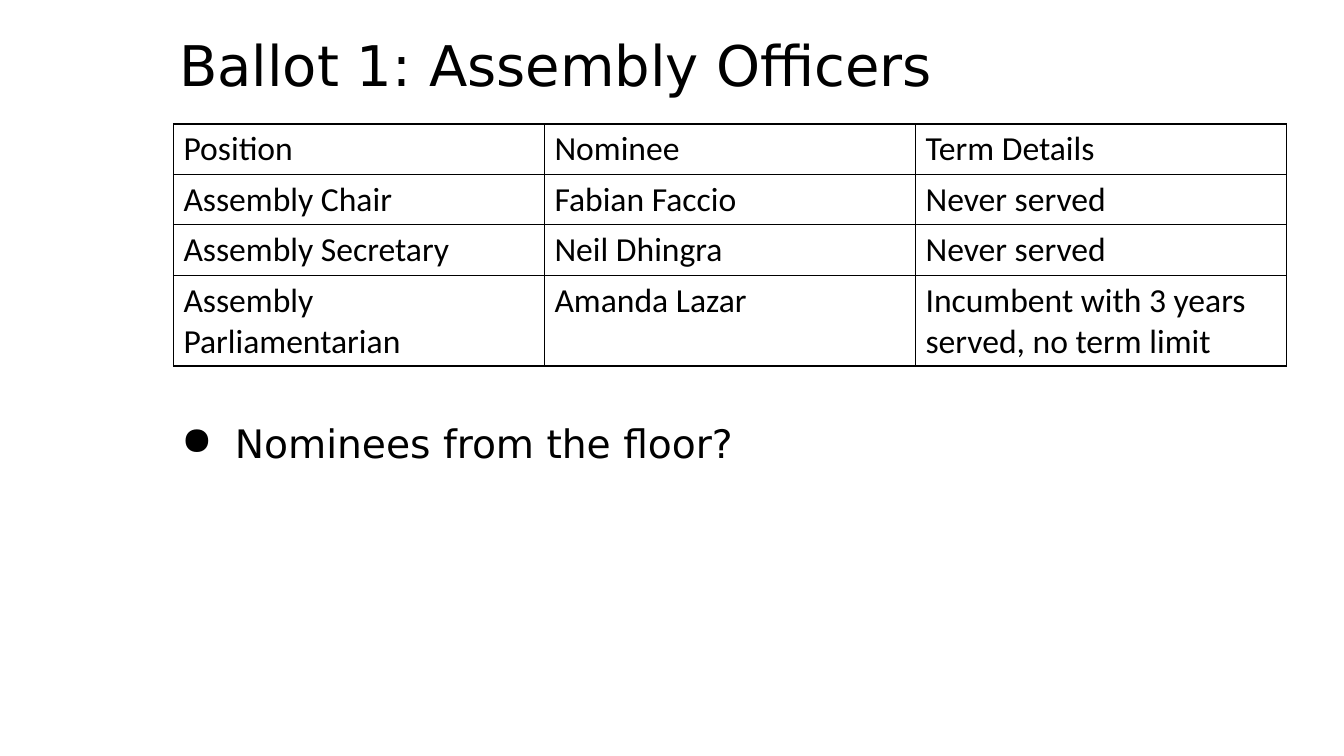
from lxml import etree
from pptx import Presentation
from pptx import util as u
from pptx.dml.color import RGBColor
from pptx.enum import text
from pptx.oxml import ns

COLORS = {"ink": "000000", "paper": "FFFFFF"}
WIDTH, HEIGHT = 13.33, 7.5
COLUMN_WIDTH = 3.68
ROW_HEIGHT = 0.5
LAST_ROW_HEIGHT = 0.9

OFFICERS = [
    ("Position", "Nominee", "Term Details"),
    ("Assembly Chair", "Fabian Faccio", "Never served"),
    ("Assembly Secretary", "Neil Dhingra", "Never served"),
    ("Assembly Parliamentarian", "Amanda Lazar",
     "Incumbent with 3 years served, no term limit"),
]


def color(name):
    return RGBColor.from_string(COLORS[name])


def style_font(paragraph, name, size):
    paragraph.font.name = name
    paragraph.font.size = u.Pt(size)
    paragraph.font.color.rgb = color("ink")


def add_text(slide, box, words, size, inset, anchor):
    shape = slide.shapes.add_textbox(*map(u.Inches, box))
    frame = shape.text_frame
    frame.word_wrap = True
    frame.vertical_anchor = anchor
    frame.margin_left = frame.margin_right = u.Inches(inset[0])
    frame.margin_top = frame.margin_bottom = u.Inches(inset[1])
    paragraph = frame.paragraphs[0]
    paragraph.text = words
    style_font(paragraph, "DejaVu Sans", size)
    return paragraph


def add_bullet(paragraph, left, hanging):
    properties = paragraph._p.get_or_add_pPr()
    properties.set("marL", str(u.Inches(left)))
    properties.set("indent", str(-u.Inches(hanging)))
    bullet = etree.Element(ns.qn("a:buChar"), char="●")
    properties.insert(0, bullet)


def add_borders(cell):
    properties = cell._tc.get_or_add_tcPr()
    for index, side in enumerate(("lnL", "lnR", "lnT", "lnB")):
        line = etree.Element(ns.qn(f"a:{side}"), w=str(u.Pt(1)))
        fill = etree.SubElement(line, ns.qn("a:solidFill"))
        etree.SubElement(fill, ns.qn("a:srgbClr"), val=COLORS["ink"])
        properties.insert(index, line)


def add_table(slide, left, top, rows):
    columns = len(rows[0])
    heights = [ROW_HEIGHT] * (len(rows) - 1) + [LAST_ROW_HEIGHT]
    table = slide.shapes.add_table(
        len(rows), columns, u.Inches(left), u.Inches(top),
        u.Inches(columns * COLUMN_WIDTH), u.Inches(sum(heights))).table
    table.first_row = table.horz_banding = False
    for column in table.columns:
        column.width = u.Inches(COLUMN_WIDTH)
    for row, height, words in zip(table.rows, heights, rows):
        row.height = u.Inches(height)
        for cell, word in zip(row.cells, words):
            cell.text = word
            cell.fill.solid()
            cell.fill.fore_color.rgb = color("paper")
            add_borders(cell)
            style_font(cell.text_frame.paragraphs[0], "Calibri", 24)


def main():
    presentation = Presentation()
    presentation.slide_width = u.Inches(WIDTH)
    presentation.slide_height = u.Inches(HEIGHT)
    slide = presentation.slides.add_slide(presentation.slide_layouts[6])
    title = add_text(slide, (1.68, -0.05, 11.03, 1.45),
                     "Ballot 1: Assembly Officers", 40, (0.1, 0.05),
                     text.MSO_ANCHOR.MIDDLE)
    title.line_spacing = 0.9
    add_table(slide, 1.72, 1.23, OFFICERS)
    question = add_text(slide, (1.53, 4.03, 10.71, 0.74),
                        "Nominees from the floor?", 28, (0.13, 0.13),
                        text.MSO_ANCHOR.TOP)
    add_bullet(question, 0.67, 0.53)
    presentation.save("out.pptx")


if __name__ == "__main__":
    main()
